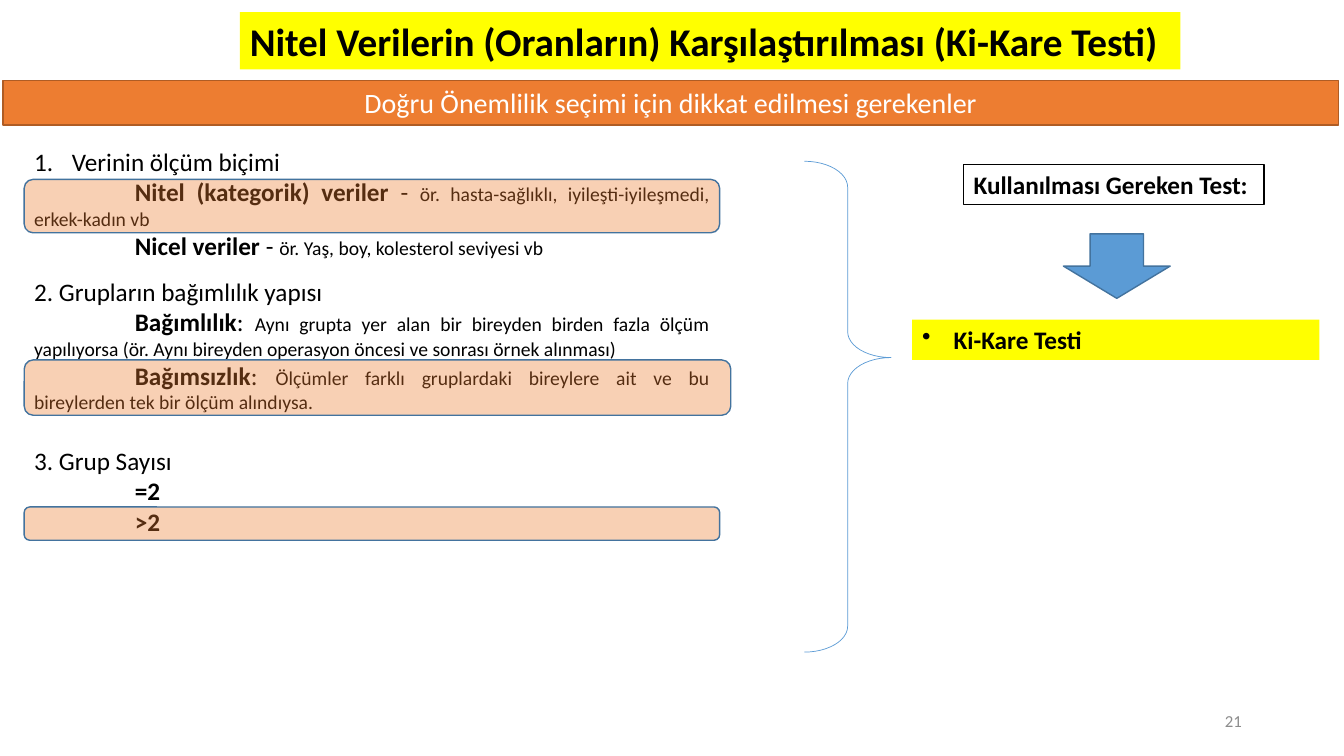
from dataclasses import dataclass
from typing import Optional

from lxml.etree import SubElement
from pptx import Presentation
from pptx.dml.color import RGBColor
from pptx.enum.shapes import MSO_SHAPE
from pptx.enum.text import MSO_ANCHOR, PP_ALIGN
from pptx.oxml.ns import qn
from pptx.shapes.autoshape import Shape
from pptx.slide import Slide
from pptx.util import Pt

FONT = "Calibri"
BLACK = RGBColor(0x00, 0x00, 0x00)
WHITE = RGBColor(0xFF, 0xFF, 0xFF)
GRAY = RGBColor(0x8C, 0x8C, 0x8C)
YELLOW = RGBColor(0xFF, 0xFF, 0x00)
ORANGE = RGBColor(0xED, 0x7D, 0x31)
DARK_ORANGE = RGBColor(0xAF, 0x5C, 0x24)
BLUE = RGBColor(0x5B, 0x9B, 0xD5)
DARK_BLUE = RGBColor(0x43, 0x73, 0x9E)

LEFT = 17.28
COLUMN_WIDTH = 496.8
OPTION_INDENT = 72


@dataclass(frozen=True)
class Box:
    left: float
    top: float
    width: float
    height: float

    def lengths(self) -> tuple[Pt, Pt, Pt, Pt]:
        return Pt(self.left), Pt(self.top), Pt(self.width), Pt(self.height)


@dataclass(frozen=True)
class Label:
    text: str
    size: float
    color: RGBColor = BLACK
    bold: bool = True
    alignment: PP_ALIGN = PP_ALIGN.LEFT
    anchor: MSO_ANCHOR = MSO_ANCHOR.TOP
    bullet_indent: float = 0


@dataclass(frozen=True)
class Option:
    term: str
    separator: str = ""
    detail: str = ""


@dataclass(frozen=True)
class Criterion:
    box: Box
    heading: str
    options: tuple[Option, ...]
    number_indent: float = 0


CRITERIA = (
    Criterion(
        Box(LEFT, 100.8, COLUMN_WIDTH, 89.28),
        "Verinin ölçüm biçimi",
        (
            Option("Nitel (kategorik) veriler ", "- ",
                   "ör. hasta-sağlıklı, iyileşti-iyileşmedi, erkek-kadın vb"),
            Option("Nicel veriler ", "- ", "ör. Yaş, boy, kolesterol seviyesi vb"),
        ),
        number_indent=27,
    ),
    Criterion(
        Box(LEFT, 193.68, COLUMN_WIDTH, 106.56),
        "2. Grupların bağımlılık yapısı",
        (
            Option("Bağımlılık", ": ",
                   "Aynı grupta yer alan bir bireyden birden fazla ölçüm yapılıyorsa "
                   "(ör. Aynı bireyden operasyon öncesi ve sonrası örnek alınması)"),
            Option("Bağımsızlık", ": ",
                   "Ölçümler farklı gruplardaki bireylere ait ve bu bireylerden "
                   "tek bir ölçüm alındıysa."),
        ),
    ),
    Criterion(
        Box(LEFT, 314.64, 187.92, 72.72),
        "3. Grup Sayısı",
        (Option("=2"), Option(">2")),
    ),
)

HIGHLIGHTS = (
    Box(LEFT, 257.04, 504.72, 39.6),
    Box(LEFT, 128.16, COLUMN_WIDTH, 38.16),
    Box(LEFT, 362.16, COLUMN_WIDTH, 23.76),
)


def set_hanging_mark(paragraph, indent: float, tag: str, **attributes: str) -> None:
    """Hang a bullet or number in front of the paragraph."""
    properties = paragraph._p.get_or_add_pPr()
    properties.set("marL", str(Pt(indent)))
    properties.set("indent", str(-Pt(indent)))
    SubElement(properties, qn(tag), attributes)


def add_label(shape: Shape, label: Label) -> None:
    frame = shape.text_frame
    frame.word_wrap = True
    frame.vertical_anchor = label.anchor
    paragraph = frame.paragraphs[0]
    paragraph.text = label.text
    paragraph.alignment = label.alignment
    font = paragraph.font
    font.name, font.size, font.bold = FONT, Pt(label.size), label.bold
    font.color.rgb = label.color
    if label.bullet_indent:
        set_hanging_mark(paragraph, label.bullet_indent, "a:buChar", char="•")


def add_figure(slide: Slide, kind: MSO_SHAPE, box: Box, fill: Optional[RGBColor] = None,
               line: Optional[RGBColor] = None, line_width: float = 1,
               label: Optional[Label] = None) -> Shape:
    shape = slide.shapes.add_shape(kind, *box.lengths())
    shape.shadow.inherit = False
    if fill is None:
        shape.fill.background()
    else:
        shape.fill.solid()
        shape.fill.fore_color.rgb = fill
    if line is None:
        shape.line.fill.background()
    else:
        shape.line.color.rgb = line
        shape.line.width = Pt(line_width)
    if label:
        add_label(shape, label)
    return shape


def add_criterion(slide: Slide, criterion: Criterion) -> None:
    frame = slide.shapes.add_textbox(*criterion.box.lengths()).text_frame
    frame.word_wrap = True
    heading = frame.paragraphs[0]
    heading.text = criterion.heading
    if criterion.number_indent:
        set_hanging_mark(heading, criterion.number_indent, "a:buAutoNum", type="arabicPeriod")
    for option in criterion.options:
        paragraph = frame.add_paragraph()
        paragraph.alignment = PP_ALIGN.JUSTIFY if option.detail else PP_ALIGN.LEFT
        paragraph._p.get_or_add_pPr().set("indent", str(Pt(OPTION_INDENT)))
        for text, size, bold in ((option.term, 18, True), (option.separator, 18, False),
                                 (option.detail, 14, False)):
            if text:
                run = paragraph.add_run()
                run.text = text
                run.font.size, run.font.bold = Pt(size), bold
    for paragraph in frame.paragraphs:
        paragraph.font.name, paragraph.font.size = FONT, Pt(18)
        paragraph.font.color.rgb = BLACK


def add_highlight(slide: Slide, box: Box) -> None:
    shape = add_figure(slide, MSO_SHAPE.ROUNDED_RECTANGLE, box, ORANGE, DARK_BLUE)
    color = shape.fill._xPr.find(qn("a:solidFill"))[0]
    SubElement(color, qn("a:alpha"), val="36000")


def main() -> None:
    presentation = Presentation()
    presentation.slide_width, presentation.slide_height = Pt(960), Pt(540)
    slide = presentation.slides.add_slide(presentation.slide_layouts[6])

    add_figure(slide, MSO_SHAPE.RECTANGLE, Box(2.16, 57.6, 954, 31.68), ORANGE, DARK_ORANGE,
               label=Label("Doğru Önemlilik seçimi için dikkat edilmesi gerekenler", 20,
                           WHITE, bold=False, alignment=PP_ALIGN.CENTER))
    for criterion in CRITERIA:
        add_criterion(slide, criterion)
    for box in HIGHLIGHTS:
        add_highlight(slide, box)

    brace = add_figure(slide, MSO_SHAPE.RIGHT_BRACE, Box(574.56, 115.2, 61.92, 350.64),
                       line=BLUE, line_width=0.5)
    brace.adjustments[0], brace.adjustments[1] = 0.3, 0.4

    add_figure(slide, MSO_SHAPE.RECTANGLE, Box(651.6, 228.24, 290.88, 28.8), YELLOW,
               label=Label("Ki-Kare Testi", 18, bullet_indent=22.5))
    add_figure(slide, MSO_SHAPE.RECTANGLE, Box(688.32, 117.36, 214.56, 28.8), WHITE, BLACK,
               label=Label("Kullanılması Gereken Test:", 18))
    add_figure(slide, MSO_SHAPE.DOWN_ARROW, Box(759.6, 167.04, 76.32, 46.08), BLUE, DARK_BLUE)

    page_number = slide.shapes.add_textbox(*Box(678.24, 500.4, 216, 28.8).lengths())
    add_label(page_number, Label("21", 12, GRAY, bold=False, alignment=PP_ALIGN.RIGHT,
                                 anchor=MSO_ANCHOR.MIDDLE))
    add_figure(slide, MSO_SHAPE.RECTANGLE, Box(171.36, 8.64, 671.76, 41.04), YELLOW,
               label=Label("Nitel Verilerin (Oranların) Karşılaştırılması (Ki-Kare Testi)", 28))

    presentation.save("out.pptx")


if __name__ == "__main__":
    main()
